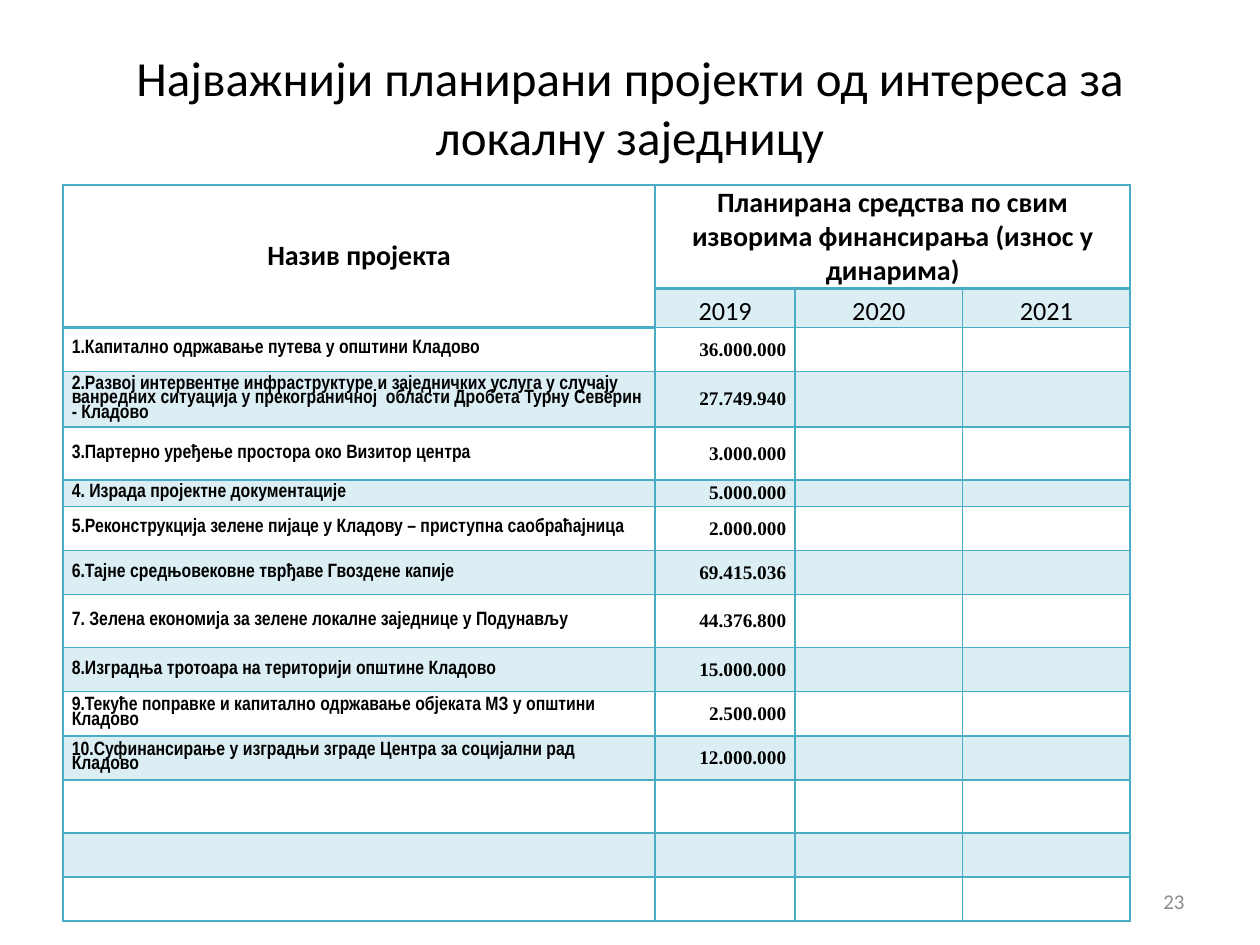
from dataclasses import dataclass

from lxml.etree import SubElement
from pptx import Presentation
from pptx.dml.color import RGBColor
from pptx.enum.text import MSO_ANCHOR, PP_ALIGN
from pptx.oxml.ns import qn
from pptx.util import Inches, Pt


@dataclass(frozen=True)
class Theme:
    text: str = "000000"
    muted: str = "8C8C8C"
    accent: str = "4BACC6"
    band_alpha: int = 20000
    heading_font: str = "Calibri"
    project_font: str = "Arial Narrow"
    amount_font: str = "Times New Roman"
    title_size: float = 28
    header_size: float = 16
    year_size: float = 15
    body_size: float = 11
    number_size: float = 12


THEME = Theme()
TITLE = "Најважнији планирани пројекти од интереса за локалну заједницу"
PROJECT_HEADER = "Назив пројекта"
FUNDS_HEADER = "Планирана средства по свим изворима финансирања (износ у динарима)"
YEARS = ["2019", "2020", "2021"]
PROJECTS = [
    ("1.Капитално одржавање путева у општини Кладово", "36.000.000"),
    ("2.Развој интервентне инфраструктуре и заједничких услуга у случају ванредних "
     "ситуација у прекограничној  области Дробета Турну Северин - Кладово", "27.749.940"),
    ("3.Партерно уређење простора око Визитор центра", "3.000.000"),
    ("4. Израда пројектне документације", "5.000.000"),
    ("5.Реконструкција зелене пијаце у Кладову – приступна саобраћајница", "2.000.000"),
    ("6.Тајне средњовековне тврђаве Гвоздене капије", "69.415.036"),
    ("7. Зелена економија за зелене локалне заједнице у Подунављу", "44.376.800"),
    ("8.Изградња тротоара на територији општине Кладово", "15.000.000"),
    ("9.Текуће поправке и капитално одржавање објеката МЗ у општини Кладово", "2.500.000"),
    ("10.Суфинансирање у изградњи зграде Центра за социјални рад Кладово", "12.000.000"),
]
COLUMN_WIDTHS = [4.7, 1.11, 1.33, 1.33]
ROW_HEIGHTS = [0.82, 0.31, 0.35, 0.43, 0.42, 0.21, 0.35, 0.35, 0.42,
               0.35, 0.35, 0.35, 0.42, 0.35, 0.35]
HEADER_ROWS = 2


def format_text(frame, text, font, size, align, color=THEME.text, bold=False):
    frame.text = text
    para = frame.paragraphs[0]
    para.alignment = align
    for span in para.runs:
        span.font.name = font
        span.font.size = Pt(size)
        span.font.bold = bold
        span.font.color.rgb = RGBColor.from_string(color)
    return para


def set_borders(cell, bottom_width):
    properties = cell._tc.get_or_add_tcPr()
    for side, width in (("L", 1), ("R", 1), ("T", 1), ("B", bottom_width)):
        line = SubElement(properties, qn(f"a:ln{side}"), w=str(Pt(width)))
        fill = SubElement(line, qn("a:solidFill"))
        SubElement(fill, qn("a:srgbClr"), val=THEME.accent)


def style_cell(cell, row, column):
    cell.margin_left = cell.margin_right = Inches(0.07)
    cell.margin_top = cell.margin_bottom = 0
    cell.vertical_anchor = MSO_ANCHOR.MIDDLE
    closes_header = (row, column) == (1, 0) or row == 0
    set_borders(cell, 2 if closes_header else 1)
    if row % 2:
        cell.fill.solid()
        cell.fill.fore_color.rgb = RGBColor.from_string(THEME.accent)
        color = cell._tc.tcPr.find(qn("a:solidFill")).find(qn("a:srgbClr"))
        SubElement(color, qn("a:alpha"), val=str(THEME.band_alpha))
    else:
        cell.fill.background()
    SubElement(cell.text_frame.paragraphs[0]._p, qn("a:endParaRPr"),
               sz=str(int(THEME.body_size * 100)))


def fill_header(table):
    table.cell(0, 0).merge(table.cell(1, 0))
    table.cell(0, 1).merge(table.cell(0, 3))
    for column, text in enumerate((PROJECT_HEADER, FUNDS_HEADER)):
        format_text(table.cell(0, column).text_frame, text, THEME.heading_font,
                    THEME.header_size, PP_ALIGN.CENTER, bold=True)
    table.cell(0, 1).vertical_anchor = MSO_ANCHOR.BOTTOM
    for column, year in enumerate(YEARS, start=1):
        cell = table.cell(1, column)
        cell.vertical_anchor = MSO_ANCHOR.BOTTOM
        format_text(cell.text_frame, year, THEME.heading_font,
                    THEME.year_size, PP_ALIGN.CENTER)


def fill_projects(table):
    for row, (project, amount) in enumerate(PROJECTS, start=HEADER_ROWS):
        para = format_text(table.cell(row, 0).text_frame, project, THEME.project_font,
                           THEME.body_size, PP_ALIGN.LEFT, bold=True)
        para.line_spacing = 0.8
        format_text(table.cell(row, 1).text_frame, amount, THEME.amount_font,
                    THEME.body_size, PP_ALIGN.RIGHT, bold=True)


def add_project_table(page, box):
    table = page.shapes.add_table(len(ROW_HEIGHTS), len(COLUMN_WIDTHS), *box).table
    table.first_row = table.horz_banding = False
    for column, width in zip(table.columns, COLUMN_WIDTHS):
        column.width = Inches(width)
    for row, height in zip(table.rows, ROW_HEIGHTS):
        row.height = Inches(height)
    for row in range(len(ROW_HEIGHTS)):
        for column in range(len(COLUMN_WIDTHS)):
            style_cell(table.cell(row, column), row, column)
    fill_header(table)
    fill_projects(table)


def add_title(page, box):
    title = page.shapes.title
    title.left, title.top, title.width, title.height = box
    title.text_frame.vertical_anchor = MSO_ANCHOR.MIDDLE
    format_text(title.text_frame, TITLE, THEME.heading_font,
                THEME.title_size, PP_ALIGN.CENTER)


def add_page_number(page, box):
    frame = page.shapes.add_textbox(*box).text_frame
    frame.word_wrap = True
    frame.vertical_anchor = MSO_ANCHOR.MIDDLE
    format_text(frame, "23", THEME.heading_font, THEME.number_size,
                PP_ALIGN.RIGHT, THEME.muted)


def inches_box(*lengths):
    return [Inches(length) for length in lengths]


def main():
    deck = Presentation()
    deck.slide_width, deck.slide_height = Inches(10), Inches(7.5)
    page = deck.slides.add_slide(deck.slide_layouts[5])
    add_title(page, inches_box(0.5, 0.3, 9, 1.09))
    add_page_number(page, inches_box(7.17, 6.95, 2.33, 0.4))
    add_project_table(page, inches_box(0.5, 1.47, sum(COLUMN_WIDTHS), sum(ROW_HEIGHTS)))
    deck.save("out.pptx")


if __name__ == "__main__":
    main()
